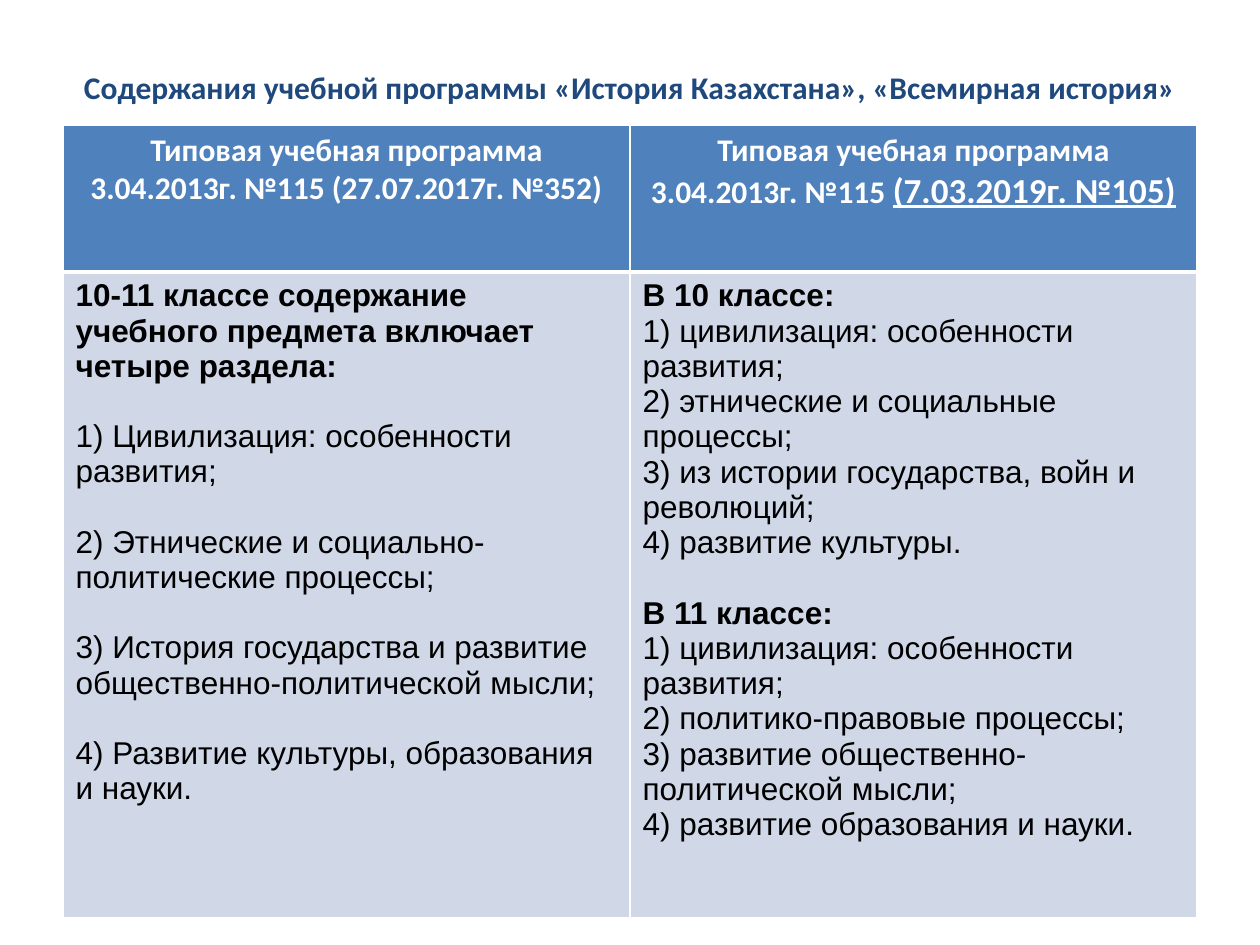
from dataclasses import dataclass

from lxml.etree import SubElement
from pptx import Presentation
from pptx.dml.color import RGBColor as RGB
from pptx.enum.text import MSO_ANCHOR as ANCHOR, PP_ALIGN as ALIGN
from pptx.oxml.ns import qn
from pptx.util import Emu, Pt


@dataclass(frozen=True)
class Theme:
    title: str = "1F497D"
    header: str = "4F81BD"
    body: str = "D0D8E8"
    white: str = "FFFFFF"
    black: str = "000000"
    head_font: str = "Calibri"
    body_font: str = "Arial"
    size: int = 18
    accent_size: int = 20
    section_gap: int = 20
    thin: int = 1
    thick: int = 3


def px(n):
    return Emu(round(n * 914400 / 126))


class SlideBuilder:
    def __init__(self, slide, theme):
        self.s = slide
        self.t = theme

    def style(self, p, font, color, bold):
        for r in p.runs:
            r.font.name = font
            r.font.size = Pt(self.t.size)
            r.font.bold = bold
            r.font.color.rgb = RGB.from_string(color)

    def title(self, text, x, y, w, h):
        tf = self.s.shapes.add_textbox(px(x), px(y), px(w), px(h)).text_frame
        tf.word_wrap = True
        tf.vertical_anchor = ANCHOR.MIDDLE
        p = tf.paragraphs[0]
        p.text = text
        p.alignment = ALIGN.CENTER
        self.style(p, self.t.head_font, self.t.title, True)

    def table(self, x, y, col_widths, row_heights):
        frame = self.s.shapes.add_table(len(row_heights), len(col_widths), px(x), px(y),
                                        px(sum(col_widths)), px(sum(row_heights)))
        table = frame.table
        for col, w in zip(table.columns, col_widths):
            col.width = px(w)
        for row, h in zip(table.rows, row_heights):
            row.height = px(h)
        return table

    def paint_cell(self, cell, fill, top, bottom):
        tc_pr = cell._tc.get_or_add_tcPr()
        thin = self.t.thin
        for side, width in (("L", thin), ("R", thin), ("T", top), ("B", bottom)):
            ln = SubElement(tc_pr, qn(f"a:ln{side}"), w=str(Pt(width)))
            SubElement(SubElement(ln, qn("a:solidFill")), qn("a:srgbClr"), val=self.t.white)
        cell.fill.solid()
        cell.fill.fore_color.rgb = RGB.from_string(fill)

    def header_cell(self, cell, lines, accent):
        self.paint_cell(cell, self.t.header, self.t.thin, self.t.thick)
        tf = cell.text_frame
        tf.text = "\n".join(lines)
        if accent:
            tf.paragraphs[-1].add_run().text = accent
        for p in tf.paragraphs:
            p.alignment = ALIGN.CENTER
            self.style(p, self.t.head_font, self.t.white, True)
        if accent:
            r = tf.paragraphs[-1].runs[-1]
            r.font.size = Pt(self.t.accent_size)
            r.font.underline = True

    def body_cell(self, cell, lines, headings, spaced):
        """Bold the headings and leave a gap before each spaced line."""
        self.paint_cell(cell, self.t.body, self.t.thick, self.t.thin)
        tf = cell.text_frame
        tf.text = "\n".join(lines)
        for i, p in enumerate(tf.paragraphs):
            p.alignment = ALIGN.LEFT
            if i in spaced:
                p.space_before = Pt(self.t.section_gap)
            self.style(p, self.t.body_font, self.t.black, i in headings)


# Wording
TITLE = "Содержания учебной программы «История Казахстана», «Всемирная история»"
PROGRAM = "Типовая учебная программа"
HEADERS = [
    ([PROGRAM, "3.04.2013г. №115 (27.07.2017г. №352)"], ""),
    ([PROGRAM, "3.04.2013г. №115 "], "(7.03.2019г. №105)"),
]
OLD_PROGRAM = [
    "10-11 классе содержание учебного предмета включает четыре раздела:",
    "1) Цивилизация: особенности развития;",
    "2) Этнические и социально-политические процессы;",
    "3) История государства и развитие общественно-политической мысли;",
    "4) Развитие культуры, образования и науки.",
]
NEW_PROGRAM = [
    "В 10 классе:",
    "1) цивилизация: особенности развития;",
    "2) этнические и социальные процессы;",
    "3) из истории государства, войн и революций;",
    "4) развитие культуры.",
    "В 11 классе:",
    "1) цивилизация: особенности развития;",
    "2) политико-правовые процессы;",
    "3) развитие общественно-политической мысли;",
    "4) развитие образования и науки.",
]


def main():
    prs = Presentation()
    prs.slide_width, prs.slide_height = px(1260), px(945)
    b = SlideBuilder(prs.slides.add_slide(prs.slide_layouts[6]), Theme())

    # Title
    b.title(TITLE, 63, 38, 1134, 97)

    # Comparison of the two programmes
    table = b.table(63, 125, [567, 567], [147, 646])
    for col, (lines, accent) in enumerate(HEADERS):
        b.header_cell(table.cell(0, col), lines, accent)
    b.body_cell(table.cell(1, 0), OLD_PROGRAM, headings={0}, spaced={1, 2, 3, 4})
    b.body_cell(table.cell(1, 1), NEW_PROGRAM, headings={0, 5}, spaced={5})

    prs.save("out.pptx")


if __name__ == "__main__":
    main()
